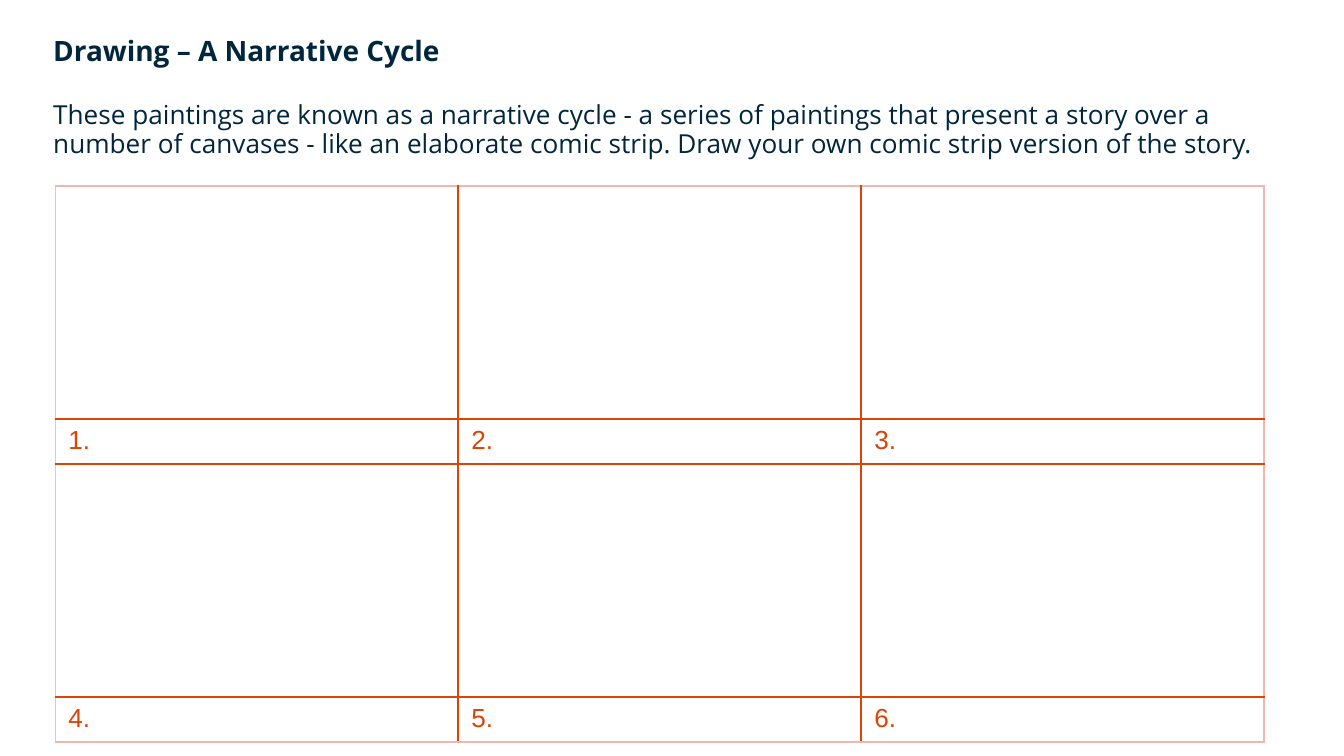
import pptx
import pptx.dml.color
import pptx.oxml
import pptx.oxml.ns
import pptx.util

EMU_PER_PX = 914400 / 134.4
NAVY, ORANGE, PINK, GREY = "00263E", "DC4405", "EDB8B0", "D0CECE"


def px(length):
    return pptx.util.Emu(round(length * EMU_PER_PX))


def color(hex_code):
    return pptx.dml.color.RGBColor.from_string(hex_code)


class Board:
    text_font = "Open Sans"
    number_font = "Arial"
    body_size = 14
    title_size = 15

    def __init__(self, slide):
        self.slide = slide

    def style(self, paragraph, font_name, size, hex_code, bold=False):
        for run in paragraph.runs:
            run.font.name = font_name
            run.font.size = pptx.util.Pt(size)
            run.font.bold = bold
            run.font.color.rgb = color(hex_code)

    def intro(self, left, top, width, height, title, task):
        frame = self.slide.shapes.add_textbox(
            px(left), px(top), px(width), px(height)).text_frame
        frame.word_wrap = True
        heading = frame.paragraphs[0]
        heading.text = title
        self.style(heading, self.text_font, self.title_size, NAVY, bold=True)
        body = frame.add_paragraph()
        body.text = task
        body.space_before = pptx.util.Pt(18.4)
        self.style(body, self.text_font, self.body_size, NAVY)
        for paragraph in frame.paragraphs:
            paragraph.line_spacing = 0.9

    def border(self, cell, side, hex_code, width):
        properties = cell._tc.get_or_add_tcPr()
        properties.append(pptx.oxml.parse_xml(
            f'<a:{side} {pptx.oxml.ns.nsdecls("a")} w="{pptx.util.Pt(width)}">'
            f'<a:solidFill><a:srgbClr val="{hex_code}"/></a:solidFill></a:{side}>'))

    def comic_strip(self, left, top, column_width, row_heights, columns):
        rows = len(row_heights)
        table = self.slide.shapes.add_table(
            rows, columns, px(left), px(top),
            px(column_width * columns), px(sum(row_heights))).table
        table.first_row = table.horz_banding = False
        for column in table.columns:
            column.width = px(column_width)
        for r, height in enumerate(row_heights):
            table.rows[r].height = px(height)
            for c in range(columns):
                cell = table.cell(r, c)
                # Inner lines are orange, the outer frame is pale
                self.border(cell, "lnL", *((ORANGE, 1) if c else (GREY, 0.5)))
                self.border(cell, "lnR", ORANGE if c < columns - 1 else PINK, 1)
                self.border(cell, "lnT", ORANGE if r else PINK, 1)
                self.border(cell, "lnB", ORANGE if r < rows - 1 else PINK, 1)
                cell.fill.background()
                # Every second row holds the captions
                if r % 2:
                    caption = cell.text_frame.paragraphs[0]
                    caption.text = f"{r // 2 * columns + c + 1}."
                    self.style(caption, self.number_font, self.body_size, ORANGE)


def main():
    presentation = pptx.Presentation()
    presentation.slide_width, presentation.slide_height = px(1344), px(756)
    board = Board(presentation.slides.add_slide(presentation.slide_layouts[6]))

    # Title and task
    board.intro(
        40, 31, 1286, 179, "Drawing – A Narrative Cycle",
        "These paintings are known as a narrative cycle - a series of paintings "
        "that present a story over a number of canvases - like an elaborate "
        "comic strip. Draw your own comic strip version of the story.")

    # Drawing panels with numbered captions
    board.comic_strip(55, 186, 403, [233, 45] * 2, columns=3)

    presentation.save("out.pptx")


if __name__ == "__main__":
    main()
